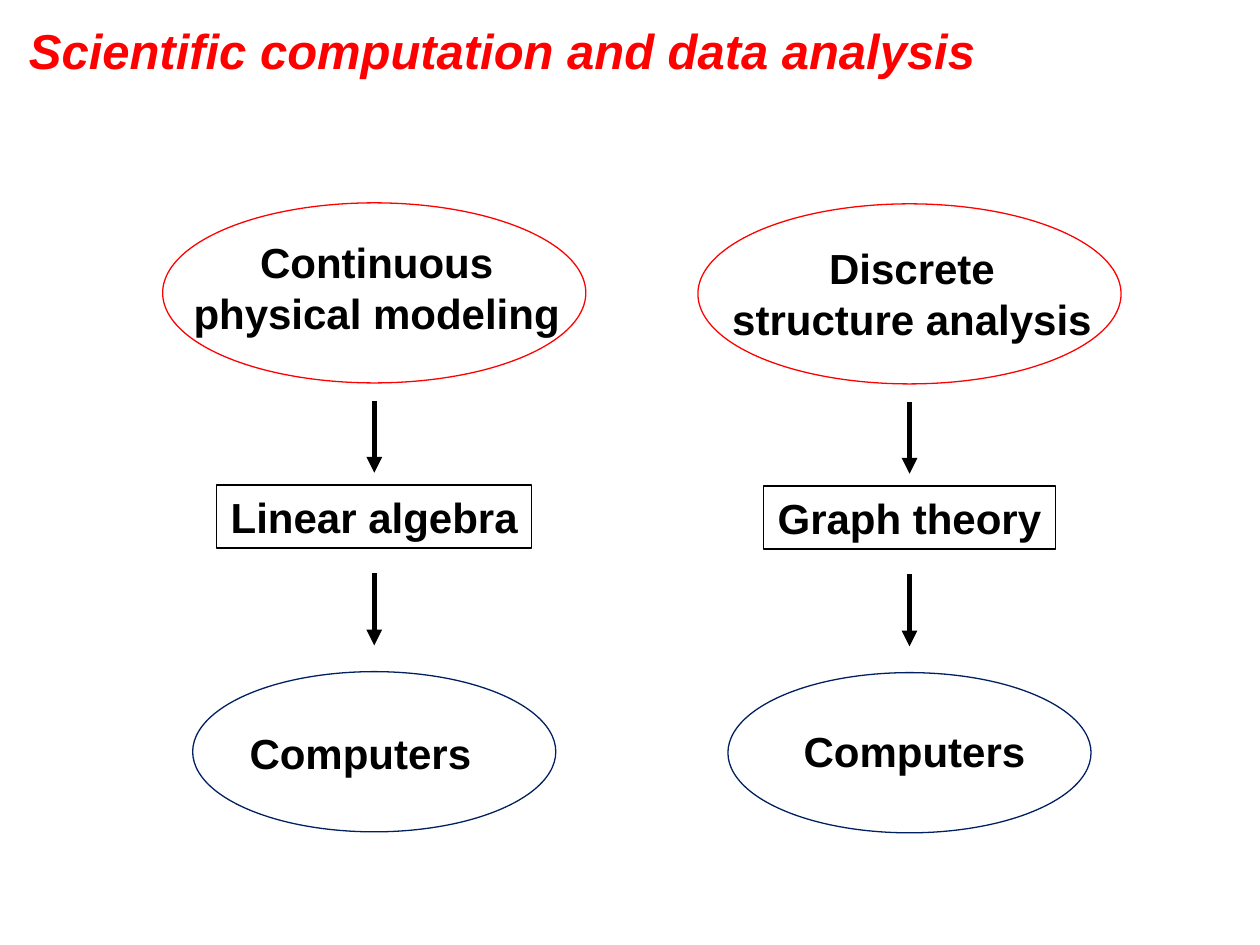
from dataclasses import dataclass

from lxml.etree import SubElement
from pptx import Presentation
from pptx.dml.color import RGBColor
from pptx.enum.shapes import MSO_CONNECTOR as Link, MSO_SHAPE as Shape
from pptx.enum.text import MSO_ANCHOR as Anchor, MSO_AUTO_SIZE as AutoSize, PP_ALIGN as Align
from pptx.oxml.ns import qn
from pptx.util import Cm, Pt


@dataclass(frozen=True)
class Theme:
    font: str = "Arial"
    ink: RGBColor = RGBColor(0x00, 0x00, 0x00)
    accent: RGBColor = RGBColor(0xFF, 0x00, 0x00)
    navy: RGBColor = RGBColor(0x00, 0x20, 0x60)
    title_size: Pt = Pt(28)
    label_size: Pt = Pt(24)
    outline: Pt = Pt(0.75)
    arrow: Pt = Pt(3)


@dataclass(frozen=True)
class Track:
    left: float
    top: float
    topic: str
    topic_box: tuple
    method: str
    method_width: float
    tool_box: tuple


THEME = Theme()
TRACK_WIDTH = 8.53
TOOL = "Computers"
TRACKS = (
    Track(3.28, 4.09, "Continuous\vphysical modeling", (0.05, 0.56, 7.98),
          "Linear algebra", 6.35, (-0.28, 10.46, 5.03)),
    Track(14.07, 4.11, "Discrete\vstructure analysis", (0.05, 0.66, 7.82),
          "Graph theory", 5.89, (0.1, 10.39, 5.03)),
)


def apply(target, values):
    for attribute, value in values.items():
        setattr(target, attribute, value)


def write(frame, text, size, color, align, italic=False):
    frame.text = text
    paragraph = frame.paragraphs[0]
    paragraph.alignment = align
    for run in paragraph.runs:
        apply(run.font, {"name": THEME.font, "size": size, "bold": True, "italic": italic})
        run.font.color.rgb = color


def write_label(frame, text):
    write(frame, text, THEME.label_size, THEME.ink, Align.CENTER)
    apply(frame, {"word_wrap": False, "auto_size": AutoSize.SHAPE_TO_FIT_TEXT,
                  "vertical_anchor": Anchor.TOP})


def centred(middle, top, width, height):
    return Cm(middle - width / 2), Cm(top), Cm(width), Cm(height)


def add_outline(shapes, kind, box, color):
    outline = shapes.add_shape(kind, *box)
    outline.shadow.inherit = False
    outline.fill.background()
    outline.line.color.rgb = color
    outline.line.width = THEME.outline
    return outline


def add_label(shapes, text, box):
    write_label(shapes.add_textbox(*box).text_frame, text)


def add_arrow(shapes, middle, top, length):
    arrow = shapes.add_connector(Link.STRAIGHT, Cm(middle), Cm(top), Cm(middle), Cm(top + length))
    arrow.line.color.rgb = THEME.ink
    arrow.line.width = THEME.arrow
    SubElement(arrow.line._get_or_add_ln(), qn("a:tailEnd"), type="triangle")
    SubElement(arrow._element.spPr, qn("a:effectLst"))


def add_title(slide, left, top, width, height):
    title = slide.shapes.title
    apply(title, {"left": Cm(left), "top": Cm(top), "width": Cm(width), "height": Cm(height)})
    write(title.text_frame, "Scientific computation and data analysis",
          THEME.title_size, THEME.accent, Align.LEFT, italic=True)
    apply(title.text_frame, {"vertical_anchor": Anchor.MIDDLE, "auto_size": AutoSize.NONE})


def add_track(slide, track, width):
    shapes = slide.shapes.add_group_shape().shapes
    middle, top = track.left + width / 2, track.top

    add_outline(shapes, Shape.OVAL, centred(middle, top, width, 3.63), THEME.accent)
    add_outline(shapes, Shape.OVAL, centred(middle, top + 9.45, 7.32, 3.23), THEME.navy)

    for text, (shift, drop, label_width), height in (
        (track.topic, track.topic_box, 2.31),
        (TOOL, track.tool_box, 1.27),
    ):
        add_label(shapes, text, centred(middle + shift, top + drop, label_width, height))

    method = add_outline(shapes, Shape.RECTANGLE,
                         centred(middle, top + 5.69, track.method_width, 1.27), THEME.ink)
    write_label(method.text_frame, track.method)

    for drop in (3.99, 7.47):
        add_arrow(shapes, middle, top + drop, 1.45)


def main():
    deck = Presentation()
    apply(deck, {"slide_width": Cm(25.4), "slide_height": Cm(19.05)})
    slide = deck.slides.add_slide(deck.slide_layouts[5])
    add_title(slide, 0.33, 0.3, 22.56, 1.42)
    for track in TRACKS:
        add_track(slide, track, TRACK_WIDTH)
    deck.save("out.pptx")


if __name__ == "__main__":
    main()
